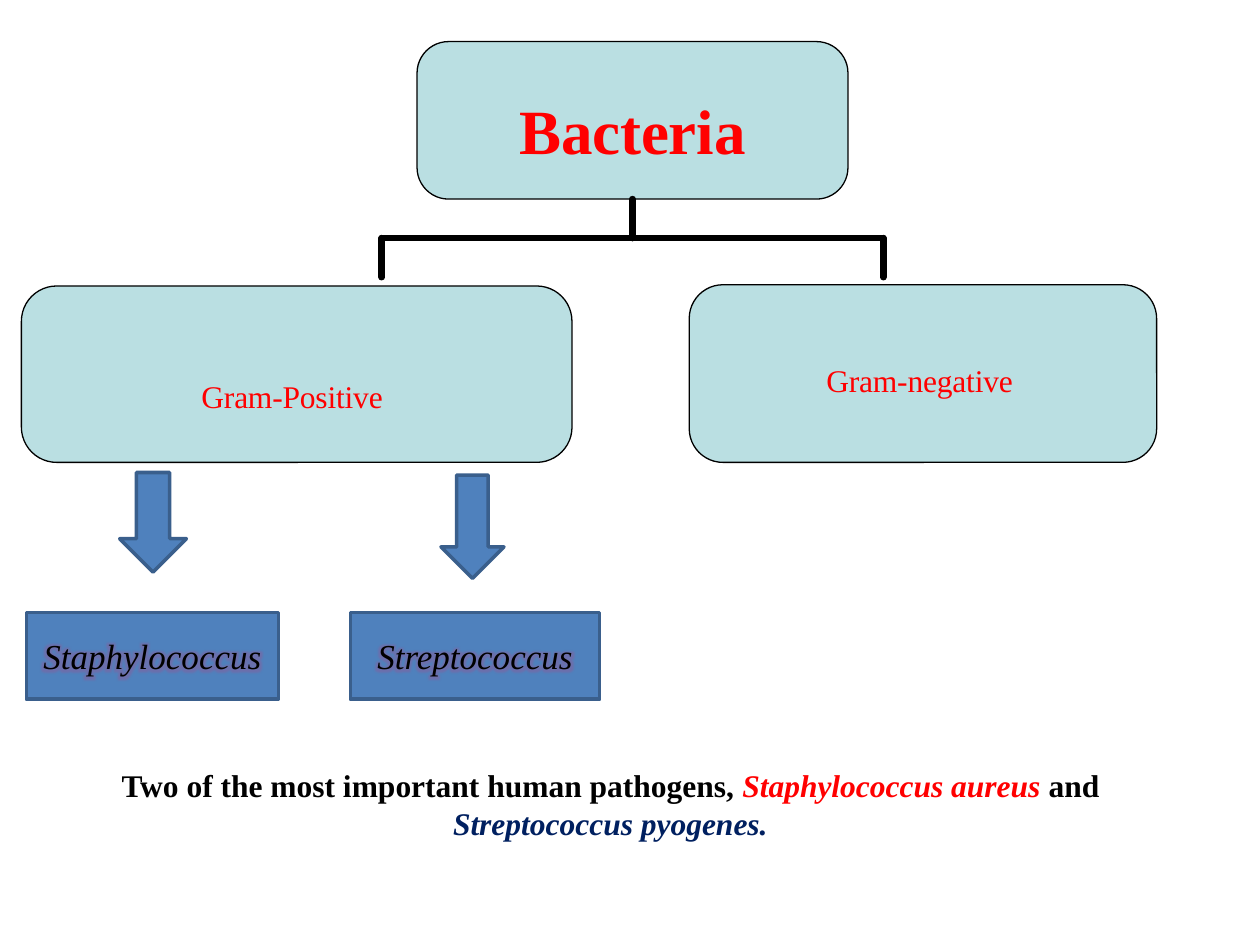
"""Build a slide that classifies bacteria by Gram stain, with two key genera."""
from dataclasses import dataclass

import pptx
import pptx.dml.color
import pptx.enum.shapes
import pptx.enum.text
import pptx.oxml
import pptx.oxml.ns
import pptx.util
from pptx.util import Inches

RGBColor = pptx.dml.color.RGBColor
Shape = pptx.enum.shapes.MSO_SHAPE
Align = pptx.enum.text.PP_ALIGN
Anchor = pptx.enum.text.MSO_ANCHOR

BLACK = RGBColor(0x00, 0x00, 0x00)
RED = RGBColor(0xFF, 0x00, 0x00)
NAVY = RGBColor(0x00, 0x20, 0x60)
PALE_TEAL = RGBColor(0xBA, 0xDF, 0xE2)
BLUE = RGBColor(0x4F, 0x81, 0xBD)
DARK_BLUE = RGBColor(0x3A, 0x5F, 0x8C)
GLOW_PURPLE = RGBColor(0x80, 0x64, 0xA2)
FONT = "Times New Roman"


@dataclass(frozen=True)
class Box:
    left: float
    top: float
    width: float
    height: float

    def lengths(self) -> tuple:
        return tuple(Inches(n) for n in (self.left, self.top, self.width, self.height))


@dataclass(frozen=True)
class Group:
    box: Box
    corner: float
    label: str
    label_box: Box


@dataclass(frozen=True)
class Genus:
    name: str
    box: Box
    arrow: Box


ROOT = Box(3.31, 0.33, 3.42, 1.25)
GROUPS = (
    Group(Box(0.17, 2.27, 4.37, 1.4), 0.2, "Gram-Positive", Box(1.5, 2.94, 1.68, 0.4)),
    Group(Box(5.47, 2.26, 3.71, 1.41), 0.19, "Gram-negative", Box(6.46, 2.82, 1.72, 0.4)),
)
GENERA = (
    Genus("Staphylococcus", Box(0.21, 4.86, 2, 0.69), Box(0.95, 3.75, 0.53, 0.79)),
    Genus("Streptococcus", Box(2.78, 4.86, 1.98, 0.69), Box(3.5, 3.77, 0.5, 0.82)),
)
CAPTION = (
    ("Two of the most important human pathogens, ", BLACK, False),
    ("Staphylococcus aureus ", RED, True),
    ("and ", BLACK, False),
    ("Streptococcus pyogenes.", NAVY, True),
)


def write(paragraph, text: str, *, size: float, color: RGBColor, bold: bool = False,
          italic: bool = False, spacing: int = 0, glow: bool = False) -> None:
    run = paragraph.add_run()
    run.text = text
    run.font.size = pptx.util.Pt(size)
    run.font.bold = bold
    run.font.italic = italic
    run.font.color.rgb = color
    properties = run.font._element
    if spacing:
        properties.set("spc", str(spacing))
    if glow:
        properties.append(pptx.oxml.parse_xml(
            f'<a:effectLst {pptx.oxml.ns.nsdecls("a")}><a:glow rad="101600">'
            f'<a:srgbClr val="{GLOW_PURPLE}"><a:alpha val="60000"/></a:srgbClr>'
            "</a:glow></a:effectLst>"))
    run.font.name = FONT


def add_filled(slide, kind: Shape, box: Box, fill: RGBColor, line: RGBColor, weight: float):
    shape = slide.shapes.add_shape(kind, *box.lengths())
    shape.shadow.inherit = False
    shape.fill.solid()
    shape.fill.fore_color.rgb = fill
    shape.line.color.rgb = line
    shape.line.width = pptx.util.Pt(weight)
    return shape


def add_rounded(slide, box: Box, corner: float):
    shape = add_filled(slide, Shape.ROUNDED_RECTANGLE, box, PALE_TEAL, BLACK, 0.75)
    shape.adjustments[0] = corner
    return shape


def add_branch(slide, x1: float, y1: float, x2: float, y2: float):
    branch = slide.shapes.add_connector(
        pptx.enum.shapes.MSO_CONNECTOR.STRAIGHT, *(Inches(n) for n in (x1, y1, x2, y2)))
    branch.line.color.rgb = BLACK
    branch.line.width = pptx.util.Pt(3.75)
    branch.line._get_or_add_ln().set("cap", "rnd")
    branch._element.spPr.append(
        pptx.oxml.parse_xml(f'<a:effectLst {pptx.oxml.ns.nsdecls("a")}/>'))
    return branch


def place(placeholder, box: Box):
    placeholder.left, placeholder.top, placeholder.width, placeholder.height = box.lengths()
    frame = placeholder.text_frame
    frame.auto_size = pptx.enum.text.MSO_AUTO_SIZE.NONE
    frame.vertical_anchor = Anchor.TOP
    frame.word_wrap = True
    paragraph = frame.paragraphs[0]
    paragraph.alignment = Align.CENTER
    return paragraph


def add_tree(slide) -> None:
    root = add_rounded(slide, ROOT, 0.2)
    center, bar, foot = ROOT.left + ROOT.width / 2, 1.89, 2.2
    ends = (center - 1.99, center + 1.99)
    stem = add_branch(slide, center, ROOT.top + ROOT.height, center, bar)
    stem.begin_connect(root, 2)
    add_branch(slide, ends[0], bar, ends[1], bar)
    for end in ends:
        add_branch(slide, end, bar, end, foot)


def add_group(slide, group: Group) -> None:
    add_rounded(slide, group.box, group.corner)
    label = slide.shapes.add_textbox(*group.label_box.lengths())
    label.text_frame.word_wrap = False
    paragraph = label.text_frame.paragraphs[0]
    paragraph.space_before = pptx.util.Pt(0.9)
    write(paragraph, group.label, size=18, color=RED, spacing=-10)


def add_genus(slide, genus: Genus) -> None:
    add_filled(slide, Shape.DOWN_ARROW, genus.arrow, BLUE, DARK_BLUE, 2)
    frame = add_filled(slide, Shape.RECTANGLE, genus.box, BLUE, DARK_BLUE, 2).text_frame
    frame.vertical_anchor = Anchor.MIDDLE
    frame.paragraphs[0].alignment = Align.CENTER
    write(frame.paragraphs[0], genus.name, size=20, color=BLACK, italic=True, glow=True)


def main() -> None:
    deck = pptx.Presentation()
    deck.slide_width, deck.slide_height = Inches(10), Inches(7.5)
    slide = deck.slides.add_slide(deck.slide_layouts[1])

    add_tree(slide)
    for group in GROUPS:
        add_group(slide, group)
    for genus in GENERA:
        add_genus(slide, genus)

    title = slide.shapes.title
    heading = place(title, Box(3.77, 0.68, 2.5, 0.71))
    heading.space_before = pptx.util.Pt(0.9)
    write(heading, "Bacteria", size=36, color=RED, bold=True, spacing=-10)
    slide.shapes._spTree.append(title._element)

    caption = place(slide.placeholders[1], Box(0.52, 6.03, 8.65, 0.71))
    caption.space_before = pptx.util.Pt(0)
    properties = caption._element.get_or_add_pPr()
    properties.set("marL", "0")
    properties.set("indent", "0")
    properties.append(pptx.oxml.parse_xml(f'<a:buNone {pptx.oxml.ns.nsdecls("a")}/>'))
    for text, color, italic in CAPTION:
        write(caption, text, size=18, color=color, bold=True, italic=italic)

    deck.save("out.pptx")


if __name__ == "__main__":
    main()
